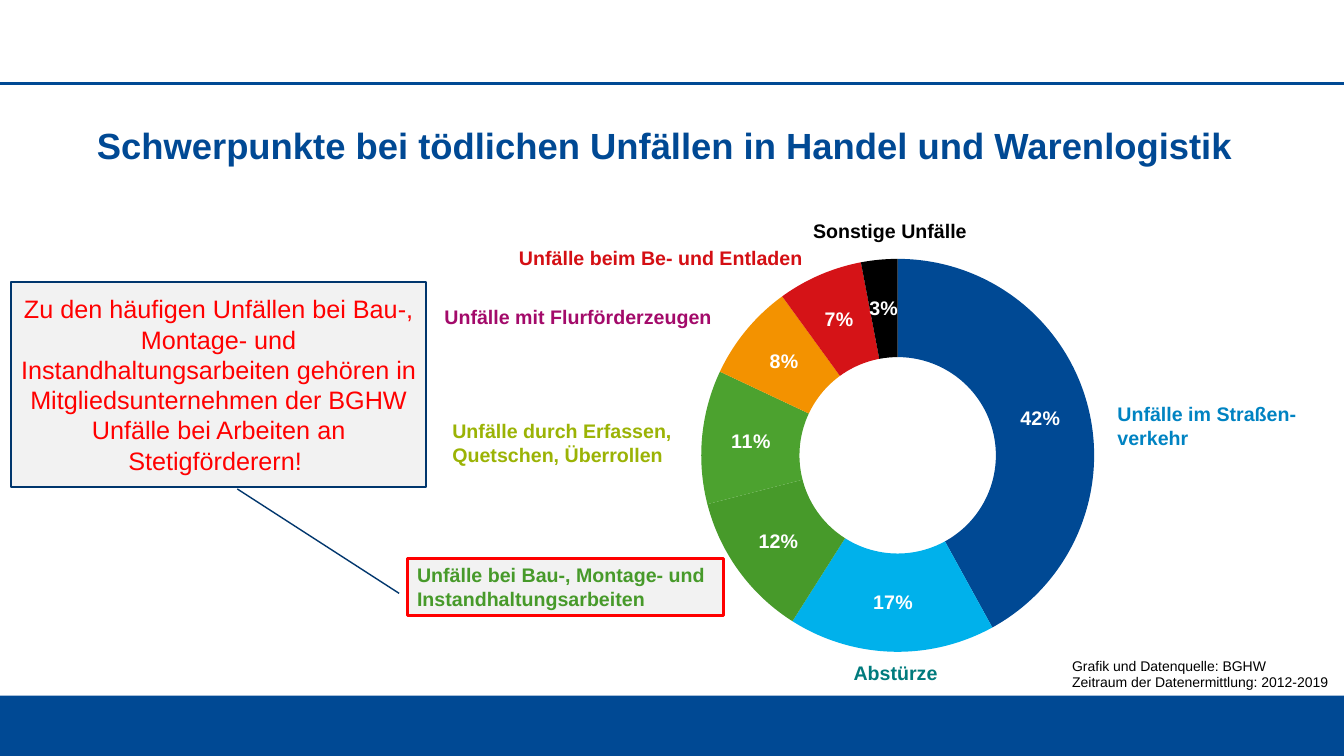
from lxml.etree import SubElement
from pptx import Presentation
from pptx.chart.data import CategoryChartData
from pptx.dml.color import RGBColor
from pptx.enum.chart import XL_CHART_TYPE
from pptx.enum.shapes import MSO_CONNECTOR, MSO_SHAPE
from pptx.enum.text import MSO_ANCHOR, PP_ALIGN
from pptx.oxml.ns import qn
from pptx.util import Cm, Pt

FONT = "Arial"
BLUE = "004994"
GREEN = "479A2A"
RED = "FF0000"
GREY = "F2F2F2"
WIDTH, HEIGHT = 33.87, 19.05
SLICES = [
    (42, BLUE), (17, "00B1EB"), (12, GREEN), (11, "4CA22F"),
    (8, "F39200"), (7, "D51317"), (3, "000000"),
]
LABELS = [
    ("Unfälle im Straßen-verkehr", "0083C2", (27.91, 10.01, 5.38, 1.45)),
    ("Abstürze", "007B7D", (21.01, 16.54, 3.12, 0.86)),
    ("Unfälle durch Erfassen, Quetschen, Überrollen", "9BB305", (11.15, 10.44, 6.4, 1.45)),
    ("Unfälle mit Flurförderzeugen", "A30A6A", (10.95, 7.57, 7.44, 0.86)),
    ("Unfälle beim Be- und Entladen", "D40F14", (12.83, 6.07, 7.75, 0.86)),
    ("Sonstige Unfälle", "000000", (20.24, 5.38, 4.65, 0.86)),
]


def rgb(value):
    """Return the colour for a hex string."""
    return RGBColor.from_string(value)


def cm(box):
    """Turn a tuple of centimetres into lengths."""
    return [Cm(v) for v in box]


def style(font, size, color, bold=False):
    """Set typeface, size, colour and weight of a font."""
    font.name, font.size, font.bold = FONT, Pt(size), bold
    font.color.rgb = rgb(color)


def write(tf, lines, size, color, bold=False, align=PP_ALIGN.LEFT, anchor=MSO_ANCHOR.TOP):
    """Fill a text frame with one paragraph per line."""
    tf.word_wrap = True
    tf.vertical_anchor = anchor
    for i, line in enumerate(lines):
        p = tf.paragraphs[0] if i == 0 else tf.add_paragraph()
        p.alignment = align
        r = p.add_run()
        r.text = line
        style(r.font, size, color, bold)


def add_box(slide, kind, box, fill, line=None, width=1):
    """Add a filled preset shape with an optional outline."""
    sp = slide.shapes.add_shape(kind, *cm(box))
    sp.shadow.inherit = False
    sp.fill.solid()
    sp.fill.fore_color.rgb = rgb(fill)
    if line:
        sp.line.color.rgb = rgb(line)
        sp.line.width = Pt(width)
    else:
        sp.line.fill.background()
    return sp


def add_label(slide, box, lines, size, color, bold=False, align=PP_ALIGN.LEFT):
    """Add a text box and return its text frame."""
    tf = slide.shapes.add_textbox(*cm(box)).text_frame
    write(tf, lines, size, color, bold, align)
    return tf


def add_rule(slide, y):
    """Add a horizontal line across the slide."""
    ln = slide.shapes.add_connector(MSO_CONNECTOR.STRAIGHT, *cm((0, y, WIDTH, y)))
    ln.line.color.rgb = rgb(BLUE)
    ln.line.width = Pt(2)
    SubElement(ln._element.spPr, qn("a:effectLst"))


def place_plot(chart, **fractions):
    """Fix the inner plot area by fractions of the chart."""
    area = chart._chartSpace.chart.plotArea
    for old in area.findall(qn("c:layout")):
        area.remove(old)
    layout = SubElement(area, qn("c:layout"))
    area.insert(0, layout)
    manual = SubElement(layout, qn("c:manualLayout"))
    settings = {"layoutTarget": "inner", "xMode": "edge", "yMode": "edge", **fractions}
    for tag, value in settings.items():
        SubElement(manual, qn(f"c:{tag}")).set("val", str(value))


def add_doughnut(slide, box):
    """Add the doughnut chart with percent labels."""
    data = CategoryChartData()
    data.categories = [str(i + 1) for i in range(len(SLICES))]
    data.add_series("Series 1", [value for value, _ in SLICES])
    chart = slide.shapes.add_chart(XL_CHART_TYPE.DOUGHNUT, *cm(box), data).chart
    chart.has_legend = chart.has_title = False
    style(chart.font, 18, "000000")
    place_plot(chart, x=0.17, y=0.02, w=0.67, h=0.98)
    plot = chart.plots[0]
    plot.vary_by_categories = True
    for i, (_, color) in enumerate(SLICES):
        point = plot.series[0].points[i]
        point.format.fill.solid()
        point.format.fill.fore_color.rgb = rgb(color)
        point.format.line.fill.background()
    labels = plot.series[0].data_labels
    labels.show_percentage = True
    labels.show_value = False
    labels.number_format, labels.number_format_is_linked = "0%", False
    style(labels.font, 14, "FFFFFF", True)


def main():
    """Build the slide and save it."""
    prs = Presentation()
    prs.slide_width, prs.slide_height = cm((WIDTH, HEIGHT))
    slide = prs.slides.add_slide(prs.slide_layouts[5])
    add_box(slide, MSO_SHAPE.RECTANGLE, (0, 17.53, WIDTH, 1.52), BLUE)
    add_rule(slide, 2.11)

    title = slide.shapes.title
    title.left, title.top, title.width, title.height = cm((2.44, 3.23, 29, 1.45))
    tf = title.text_frame
    tf.margin_left = tf.margin_top = 0
    write(tf, ["Schwerpunkte bei tödlichen Unfällen in Handel und Warenlogistik"], 26, BLUE, True)
    tf.paragraphs[0].line_spacing = 0.9

    add_doughnut(slide, (15.16, 6.32, 14.78, 10.11))

    frame = add_box(slide, MSO_SHAPE.RECTANGLE, (10.26, 14.07, 7.98, 1.45), GREY, RED, 2.25)
    write(frame.text_frame, ["Unfälle bei Bau-, Montage- und Instandhaltungsarbeiten"], 14, GREEN, True)

    callout = add_box(slide, MSO_SHAPE.LINE_CALLOUT_1, (0.28, 7.11, 10.46, 5.16), GREY, "00366D")
    for i, value in enumerate((1.01, 0.545, 1.52, 0.935)):
        callout.adjustments[i] = value
    write(callout.text_frame, [
        "Zu den häufigen Unfällen bei Bau-, Montage- und Instandhaltungsarbeiten gehören in "
        "Mitgliedsunternehmen der BGHW Unfälle bei Arbeiten an Stetigförderern! "
    ], 18, RED, align=PP_ALIGN.CENTER, anchor=MSO_ANCHOR.MIDDLE)

    for text, color, box in LABELS:
        align = PP_ALIGN.CENTER if text == "Abstürze" else PP_ALIGN.LEFT
        add_label(slide, box, [text], 14, color, True, align)

    source = add_label(slide, (26.92, 16.46, 6.99, 1.07), [
        "Grafik und Datenquelle: BGHW", "Zeitraum der Datenermittlung: 2012-2019",
    ], 10, "000000")
    source.margin_left = source.margin_right = Cm(0.1)
    source.margin_top = source.margin_bottom = Cm(0.1)
    prs.save("out.pptx")


if __name__ == "__main__":
    main()
